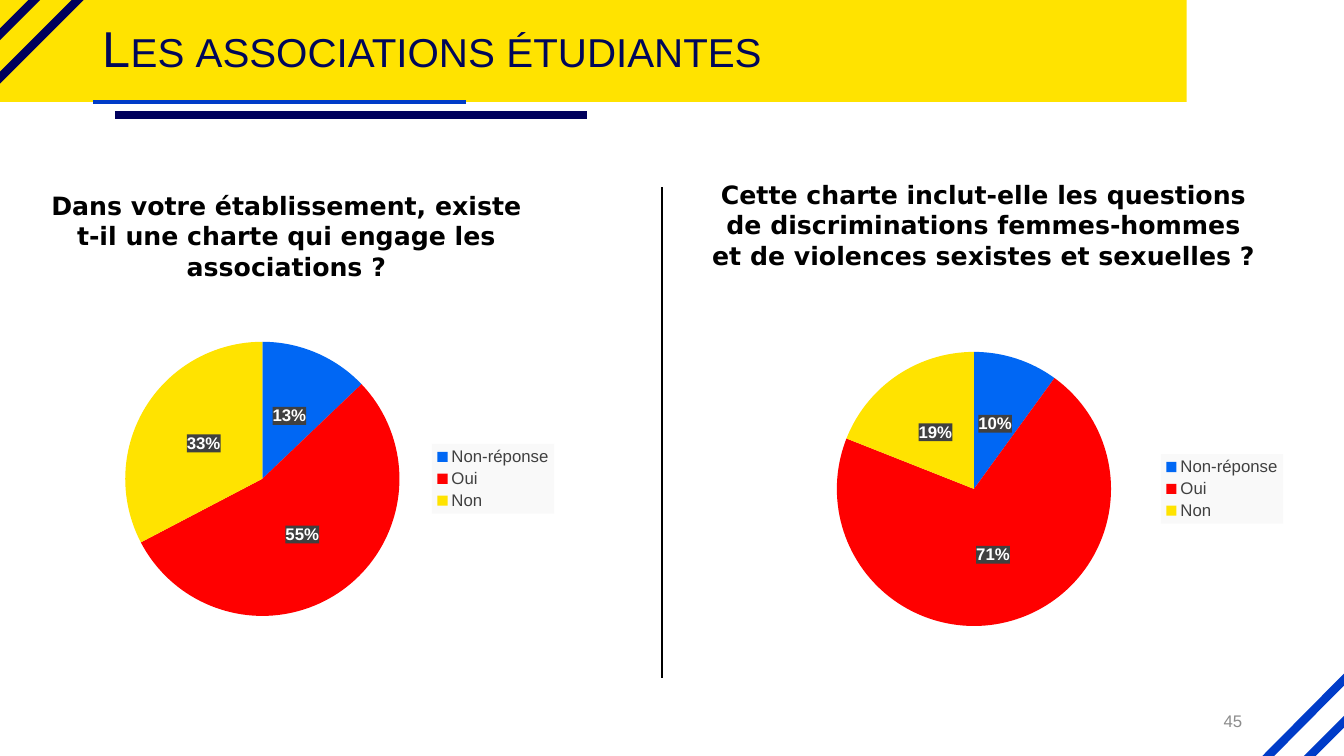
"""Build a slide on student associations with two pie charts."""
from lxml import etree
from pptx import Presentation
from pptx.chart.data import CategoryChartData
from pptx.dml.color import RGBColor
from pptx.enum.chart import XL_CHART_TYPE, XL_LABEL_POSITION, XL_LEGEND_POSITION
from pptx.enum.shapes import MSO_CONNECTOR, MSO_SHAPE
from pptx.enum.text import MSO_ANCHOR, PP_ALIGN
from pptx.oxml import parse_xml
from pptx.oxml.ns import nsdecls, qn
from pptx.util import Inches, Pt

PIE = XL_CHART_TYPE.PIE
LABEL_CENTER = XL_LABEL_POSITION.CENTER
LEGEND_RIGHT = XL_LEGEND_POSITION.RIGHT
STRAIGHT = MSO_CONNECTOR.STRAIGHT
RECTANGLE = MSO_SHAPE.RECTANGLE
TOP, MIDDLE = MSO_ANCHOR.TOP, MSO_ANCHOR.MIDDLE
LEFT, CENTER, RIGHT = PP_ALIGN.LEFT, PP_ALIGN.CENTER, PP_ALIGN.RIGHT

COLORS = {
    "yellow": "FFE300", "blue": "003CC8", "navy": "00005C", "title": "000759",
    "black": "000000", "white": "FFFFFF", "number": "8C8C8C", "legend": "404040",
    "legend_fill": "F9F9F9", "label_fill": "404040",
    "Non-réponse": "0067F4", "Oui": "FF0000", "Non": "FFE300",
}
ANSWERS = ["Non-réponse", "Oui", "Non"]
PIE_SIZE = 2.72
LEGEND_WIDTH = 1.3


def rgb(name):
    """Return the named colour."""
    return RGBColor.from_string(COLORS[name])


def set_font(font, size, color, name="Arial", bold=False):
    """Set the face, size, weight and colour of a font."""
    font.name, font.size, font.bold = name, Pt(size), bold
    font.color.rgb = rgb(color)


def add_line(s, x1, y1, x2, y2, color, width):
    """Draw a straight line without a shadow."""
    line = s.shapes.add_connector(STRAIGHT, *map(Inches, (x1, y1, x2, y2)))
    line.line.color.rgb = rgb(color)
    line.line.width = Pt(width)
    etree.SubElement(line._element.spPr, qn("a:effectLst"))


def add_text(s, box, text, size, color, align, anchor=MIDDLE, **style):
    """Add a wrapped one-paragraph text box and return its paragraph."""
    tf = s.shapes.add_textbox(*map(Inches, box)).text_frame
    tf.word_wrap = True
    tf.vertical_anchor = anchor
    p = tf.paragraphs[0]
    p.text = text
    p.alignment = align
    set_font(p.font, size, color, **style)
    return p


def fill_xml(color):
    """Return chart shape properties with a solid fill."""
    return parse_xml(f'<c:spPr {nsdecls("c", "a")}><a:solidFill>'
                     f'<a:srgbClr val="{COLORS[color]}"/></a:solidFill></c:spPr>')


def add_header(s, box, title):
    """Draw the yellow band, its underlines and the title."""
    x, y, w, h = box
    band = s.shapes.add_shape(RECTANGLE, *map(Inches, box))
    band.shadow.inherit = False
    band.fill.solid()
    band.fill.fore_color.rgb = rgb("yellow")
    band.line.fill.background()
    for reach in (0.43, 0.86):
        add_line(s, x - 0.09, y + reach, x + reach, y - 0.09, "navy", 6)
    add_line(s, x + 0.92, y + h, x + 4.62, y + h, "blue", 3)
    add_line(s, x + 1.14, y + h + 0.13, x + 5.82, y + h + 0.13, "navy", 6)
    p = add_text(s, (x + 0.92, y, 11.5, h), title, 36, "title", LEFT)
    p.line_spacing = 0.9
    p.runs[0]._r.get_or_add_rPr().set("cap", "small")


def add_footer(s, box, number):
    """Write the page number and draw the corner stripes."""
    x, y, w, h = box
    add_text(s, box, number, 12, "number", RIGHT)
    right, bottom = x + w, y + h
    add_line(s, right + 0.42, bottom + 0.3, right + 1.06, bottom - 0.34, "blue", 6)
    add_line(s, right, bottom + 0.31, right + 1.09, bottom - 0.79, "blue", 6)


def add_pie(s, box, values):
    """Add a pie chart with percentages and a legend on the right."""
    w, h = box[2:]
    data = CategoryChartData()
    data.categories = ANSWERS
    data.add_series("Series 1", values)
    chart = s.shapes.add_chart(PIE, *map(Inches, box), data).chart
    chart.has_title = False
    set_font(chart.font, 12, "black")

    chart.has_legend = True
    legend = chart.legend
    legend.position = LEGEND_RIGHT
    legend.include_in_layout = False
    set_font(legend.font, 12, "legend")
    legend._element.find(qn("c:txPr")).addprevious(fill_xml("legend_fill"))

    plot = chart.plots[0]
    plot.vary_by_categories = True
    for i, answer in enumerate(ANSWERS):
        fill = plot.series[0].points[i].format.fill
        fill.solid()
        fill.fore_color.rgb = rgb(answer)
    labels = plot.series[0].data_labels
    labels.show_value = True
    labels.number_format = '0"%"'
    labels.number_format_is_linked = False
    labels.position = LABEL_CENTER
    set_font(labels.font, 12, "white", bold=True)
    labels._element.find(qn("c:txPr")).addprevious(fill_xml("label_fill"))

    area = chart._chartSpace.chart.plotArea
    for old in area.findall(qn("c:layout")):
        area.remove(old)
    place = {"x": (w - LEGEND_WIDTH - PIE_SIZE) / 2 / w, "y": (h - PIE_SIZE) / 2 / h,
             "w": PIE_SIZE / w, "h": PIE_SIZE / h}
    sizes = "".join(f'<c:{key} val="{value:.3f}"/>' for key, value in place.items())
    area.insert(0, parse_xml(
        f'<c:layout {nsdecls("c")}><c:manualLayout><c:layoutTarget val="inner"/>'
        f'<c:xMode val="edge"/><c:yMode val="edge"/>{sizes}</c:manualLayout></c:layout>'))


def add_question(s, box, question, pie_offset, pie_width, values):
    """Place a question and, below it, the pie of its answers."""
    x, y, w, h = box
    add_text(s, box, question, 18, "black", CENTER, TOP, name="DejaVu Sans", bold=True)
    dx, dy = pie_offset
    add_pie(s, (x + dx, y + dy, pie_width, 3), values)


def main():
    """Build and save the slide."""
    prs = Presentation()
    prs.slide_width, prs.slide_height = Inches(13.33), Inches(7.5)
    s = prs.slides.add_slide(prs.slide_layouts[6])
    add_header(s, (0, 0, 11.77, 1.01), "Les associations étudiantes")
    add_footer(s, (9.42, 6.95, 3, 0.4), "45")
    add_question(
        s, (0.35, 1.84, 4.98, 1.01),
        "Dans votre établissement, existe t-il une charte qui engage les associations ?",
        (0.57, 1.41), 4.66, (13, 55, 33))
    add_line(s, 6.57, 1.86, 6.57, 6.73, "black", 1.5)
    add_question(
        s, (6.94, 1.73, 5.63, 1.01),
        "Cette charte inclut-elle les questions de discriminations femmes-hommes "
        "et de violences sexistes et sexuelles ?",
        (0.87, 1.62), 5, (10, 71, 19))
    prs.save("out.pptx")


if __name__ == "__main__":
    main()
